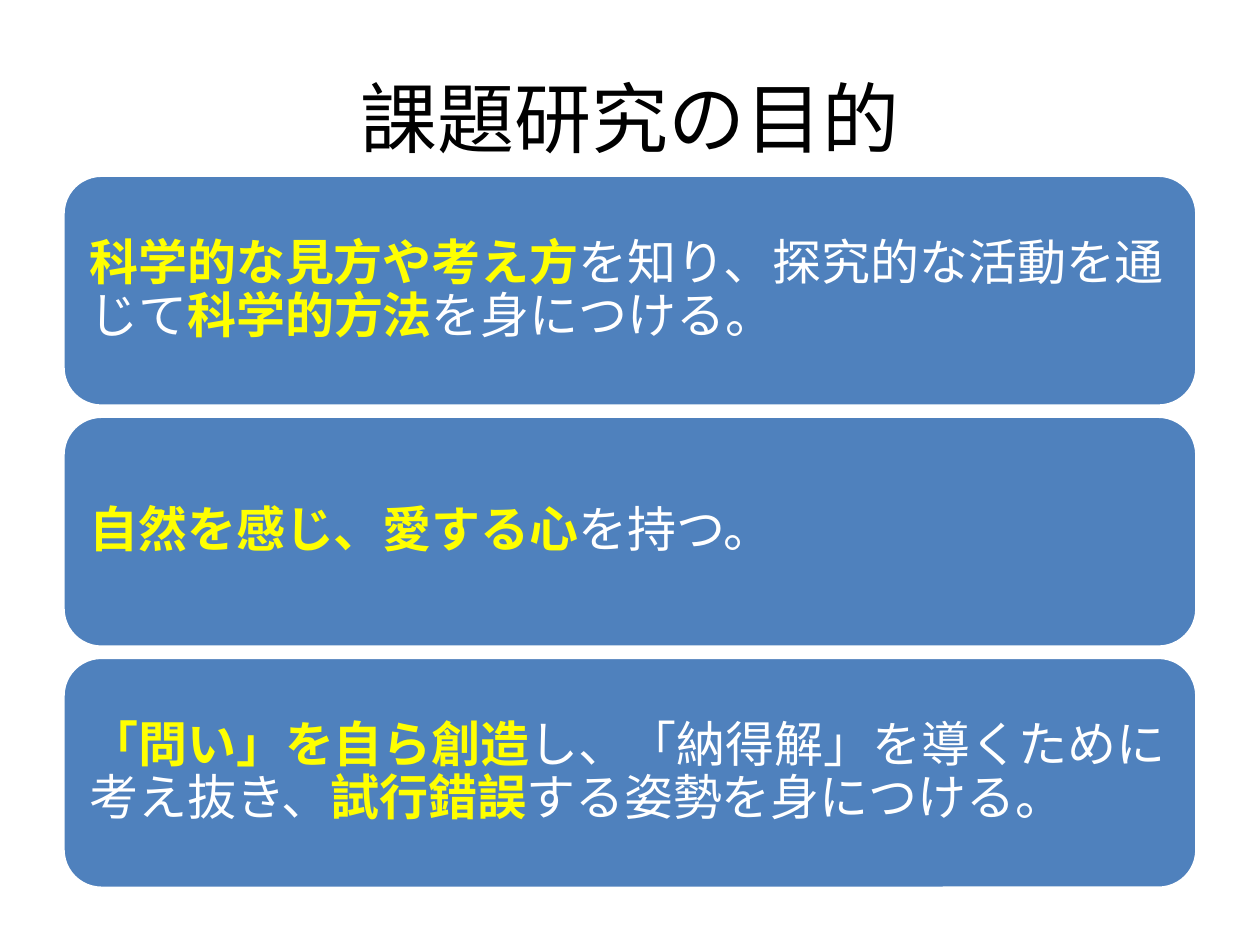
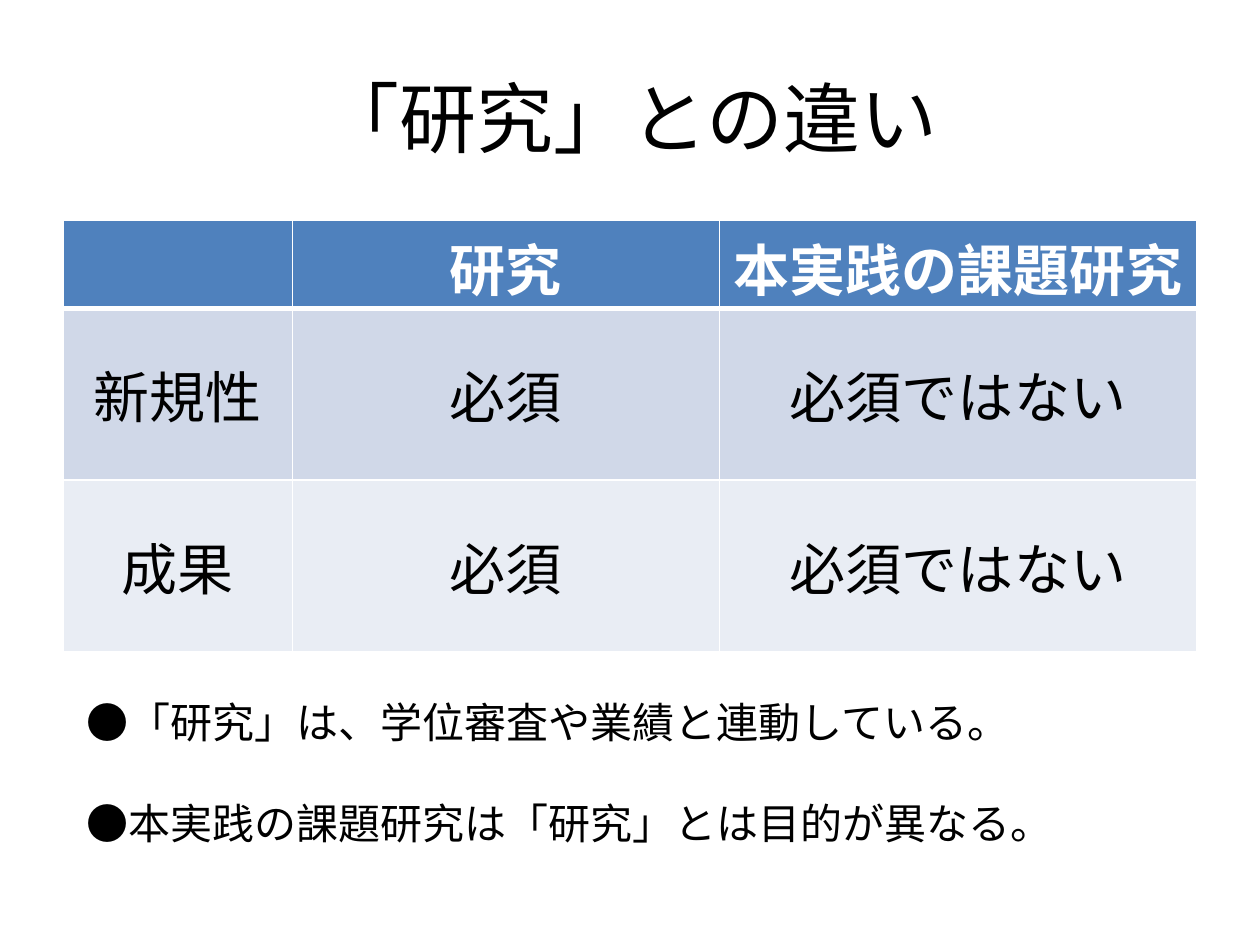
import pptx
import pptx.util
import pptx.dml.color
import pptx.enum.shapes
import pptx.enum.text
import pptx.oxml
import pptx.oxml.ns

Inches = pptx.util.Inches
Pt = pptx.util.Pt
ALIGN = pptx.enum.text.PP_ALIGN
ANCHOR = pptx.enum.text.MSO_ANCHOR

FONT = "Lato"
COLORS = {
    "panel": "4F81BD",
    "band_dark": "D0D8E8",
    "band_light": "E9EDF4",
    "ink": "000000",
    "white": "FFFFFF",
    "highlight": "FFFF00",
}
TITLE_BOX = (0.5, 0.3, 9, 1.25)

# Each goal is a list of (words, highlighted)
GOALS = [
    [("科学的な見方や考え方", True), ("を知り、探究的な活動を通じて", False),
     ("科学的方法", True), ("を身につける。", False)],
    [("自然を感じ、愛する心", True), ("を持つ。", False)],
    [("「問い」を自ら創造", True), ("し、「納得解」を導くために考え抜き、", False),
     ("試行錯誤", True), ("する姿勢を身につける。", False)],
]
COMPARISON = [
    ["", "研究", "本実践の課題研究"],
    ["新規性", "必須", "必須ではない"],
    ["成果", "必須", "必須ではない"],
]
NOTES = [
    "●「研究」は、学位審査や業績と連動している。",
    "●本実践の課題研究は「研究」とは目的が異なる。",
]


def color(key):
    return pptx.dml.color.RGBColor.from_string(COLORS[key])


def add_run(paragraph, words, size, ink="ink", bold=False):
    run = paragraph.add_run()
    run.text = words
    run.font.name = FONT
    run.font.size = Pt(size)
    run.font.bold = bold
    run.font.color.rgb = color(ink)


def add_text_frame(slide, box):
    frame = slide.shapes.add_textbox(*map(Inches, box)).text_frame
    frame.word_wrap = True
    return frame


def add_titled_slide(deck, title):
    slide = deck.slides.add_slide(deck.slide_layouts[6])
    frame = add_text_frame(slide, TITLE_BOX)
    frame.vertical_anchor = ANCHOR.MIDDLE
    frame.paragraphs[0].alignment = ALIGN.CENTER
    add_run(frame.paragraphs[0], title, 44)
    return slide


def add_goal_panels(slide, box, goals, gap=0.08):
    left, top, width, height = box
    panel_height = (height - gap * (len(goals) - 1)) / len(goals)
    for index, goal in enumerate(goals):
        panel_top = top + index * (panel_height + gap)
        panel = slide.shapes.add_shape(
            pptx.enum.shapes.MSO_SHAPE.ROUNDED_RECTANGLE,
            *map(Inches, (left, panel_top, width, panel_height)))
        panel.shadow.inherit = False
        panel.fill.solid()
        panel.fill.fore_color.rgb = color("panel")
        panel.line.color.rgb = color("white")
        panel.line.width = Pt(2)

        frame = panel.text_frame
        frame.word_wrap = True
        frame.vertical_anchor = ANCHOR.MIDDLE
        frame.margin_left = frame.margin_right = Inches(0.12)
        frame.margin_top = frame.margin_bottom = Inches(0.12)
        paragraph = frame.paragraphs[0]
        paragraph.alignment = ALIGN.LEFT
        paragraph.line_spacing = 0.9
        for words, highlighted in goal:
            add_run(paragraph, words, 28,
                    "highlight" if highlighted else "white", highlighted)


def set_borders(cell, widths):
    """Draw white cell borders; they must come before the cell fill."""
    properties = cell._tc.get_or_add_tcPr()
    for position, (side, width) in enumerate(widths.items()):
        border = pptx.oxml.parse_xml(
            f'<a:{side} {pptx.oxml.ns.nsdecls("a")} w="{Pt(width)}">'
            f'<a:solidFill><a:srgbClr val="{COLORS["white"]}"/></a:solidFill>'
            f'</a:{side}>')
        properties.insert(position, border)


def add_comparison_table(slide, box, rows, column_widths, row_heights):
    table = slide.shapes.add_table(
        len(rows), len(column_widths), *map(Inches, box)).table
    for column, width in zip(table.columns, column_widths):
        column.width = Inches(width)
    for row, height in zip(table.rows, row_heights):
        row.height = Inches(height)

    bands = ["panel", "band_dark", "band_light"]
    for r, row in enumerate(rows):
        header = r == 0
        for c, words in enumerate(row):
            cell = table.cell(r, c)
            cell.fill.solid()
            cell.fill.fore_color.rgb = color(bands[r])
            set_borders(cell, {"lnL": 1, "lnR": 1,
                               "lnT": 3 if r == 1 else 1,
                               "lnB": 3 if header else 1})
            cell.vertical_anchor = ANCHOR.TOP if header else ANCHOR.MIDDLE
            if words:
                paragraph = cell.text_frame.paragraphs[0]
                paragraph.alignment = ALIGN.CENTER
                add_run(paragraph, words, 32,
                        "white" if header else "ink", header)


def add_notes(slide, box, notes):
    frame = add_text_frame(slide, box)
    for index, note in enumerate(notes):
        paragraph = frame.add_paragraph() if index else frame.paragraphs[0]
        if index:
            paragraph.space_before = Pt(29)
        add_run(paragraph, note, 24)


def build_purpose_slide(deck):
    slide = add_titled_slide(deck, "課題研究の目的")
    add_goal_panels(slide, (0.5, 1.39, 9, 5.66), GOALS)


def build_difference_slide(deck):
    slide = add_titled_slide(deck, "「研究」との違い")
    add_comparison_table(slide, (0.5, 1.75, 9, 3.42), COMPARISON,
                         [1.82, 3.39, 3.79], [0.7, 1.36, 1.36])
    add_notes(slide, (0.59, 5.48, 8.74, 1.31), NOTES)


def main():
    deck = pptx.Presentation()
    deck.slide_width = Inches(10)
    deck.slide_height = Inches(7.5)
    build_purpose_slide(deck)
    build_difference_slide(deck)
    deck.save("out.pptx")


if __name__ == "__main__":
    main()
